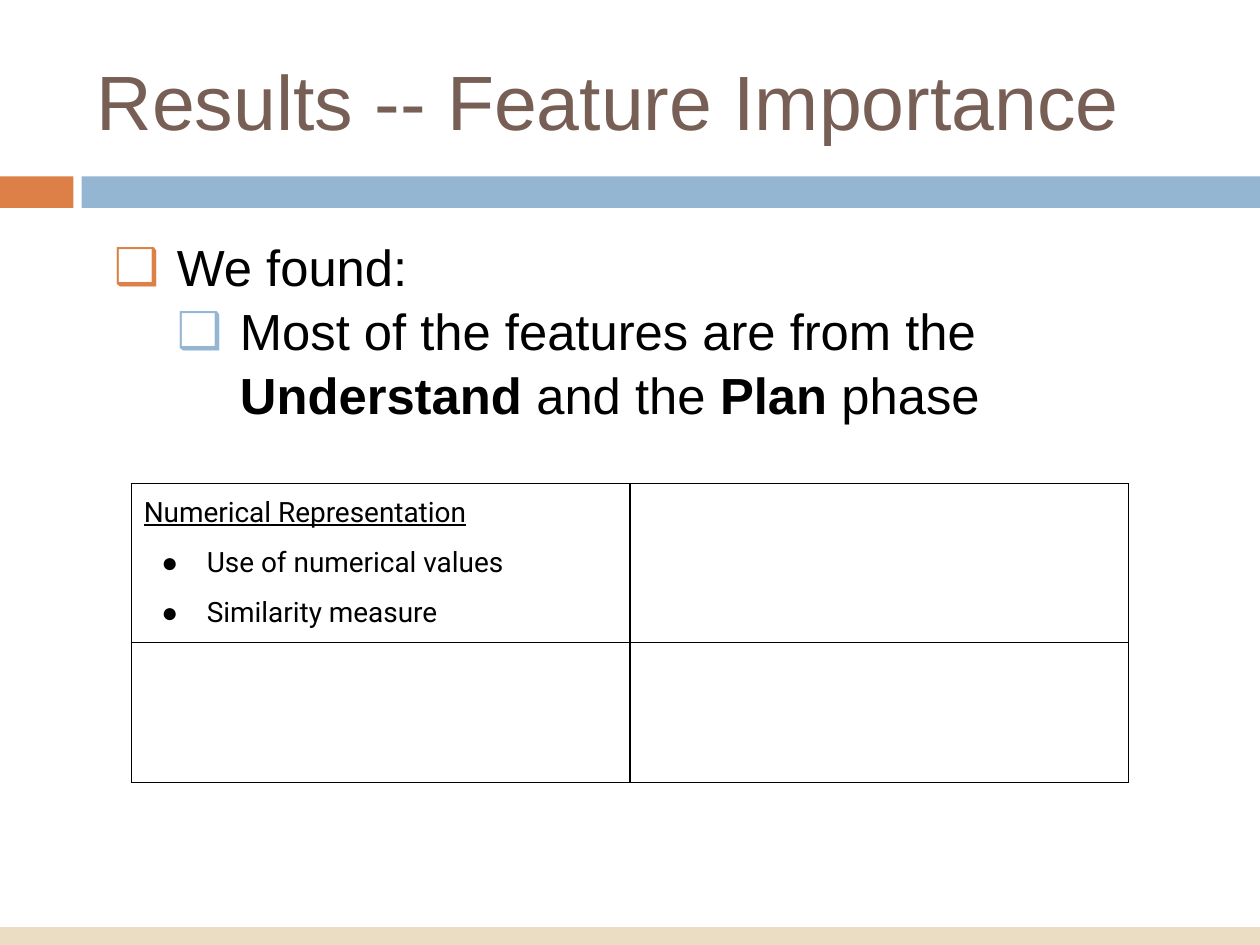
from lxml import etree
from pptx import Presentation
from pptx.dml.color import RGBColor
from pptx.enum.shapes import MSO_SHAPE
from pptx.enum.text import MSO_ANCHOR, MSO_AUTO_SIZE, PP_ALIGN
from pptx.oxml.ns import qn
from pptx.util import Pt

RECTANGLE = MSO_SHAPE.RECTANGLE
MIDDLE = MSO_ANCHOR.MIDDLE
TOP = MSO_ANCHOR.TOP
LEFT = PP_ALIGN.LEFT
NO_AUTOFIT = MSO_AUTO_SIZE.NONE
TITLE_ONLY = 5
INSET = 7.2
COLORS = {
    "orange": "DD8047",
    "blue": "94B6D2",
    "sand": "EBDDC3",
    "brown": "775F55",
    "black": "000000",
}


def add_band(slide, left, top, width, height, color):
    """Draw a plain coloured bar."""
    band = slide.shapes.add_shape(RECTANGLE, Pt(left), Pt(top), Pt(width), Pt(height))
    band.shadow.inherit = False
    band.fill.solid()
    band.fill.fore_color.rgb = RGBColor.from_string(COLORS[color])
    band.line.fill.background()


def add_bullet(paragraph, symbol, color, margin, indent):
    """Give a paragraph a coloured bullet with a hanging indent."""
    properties = paragraph._p.get_or_add_pPr()
    properties.set("marL", str(Pt(margin)))
    properties.set("indent", str(Pt(indent)))
    bullet_color = etree.SubElement(properties, qn("a:buClr"))
    etree.SubElement(bullet_color, qn("a:srgbClr"), val=COLORS[color])
    etree.SubElement(properties, qn("a:buFont"), typeface="Arial")
    etree.SubElement(properties, qn("a:buChar"), char=symbol)


def write_paragraph(paragraph, *texts, size, font="Arial", color="black",
                    bold_texts=(), underline=False, before=0, spacing=1.0):
    """Write runs into a paragraph, with those in bold_texts in bold."""
    paragraph.alignment = LEFT
    paragraph.space_before = Pt(before)
    paragraph.line_spacing = spacing
    for text in texts:
        run = paragraph.add_run()
        run.text = text
        run.font.size = Pt(size)
        run.font.name = font
        run.font.color.rgb = RGBColor.from_string(COLORS[color])
        run.font.bold = text in bold_texts
        run.font.underline = underline


def set_frame(frame, anchor):
    """Set wrapping, anchor and equal insets of a text frame."""
    frame.word_wrap = True
    frame.auto_size = NO_AUTOFIT
    frame.vertical_anchor = anchor
    frame.margin_left = frame.margin_right = Pt(INSET)
    frame.margin_top = frame.margin_bottom = Pt(INSET)


def add_title(slide, text):
    """Place and format the title placeholder."""
    title = slide.shapes.title
    title.left, title.top, title.width, title.height = Pt(48), Pt(12), Pt(648), Pt(90)
    set_frame(title.text_frame, MIDDLE)
    write_paragraph(title.text_frame.paragraphs[0], text, size=44, color="brown")


def add_findings(slide):
    """Add the two-level list of findings."""
    box = slide.shapes.add_textbox(Pt(48), Pt(126), Pt(671), Pt(356.4))
    frame = box.text_frame
    set_frame(frame, TOP)
    finding = frame.paragraphs[0]
    write_paragraph(finding, "We found:", size=29, spacing=1.05)
    add_bullet(finding, "❑", "orange", 46, -36)
    detail = frame.add_paragraph()
    detail.level = 1
    write_paragraph(detail, "Most of the features are from the ", "Understand",
                    " and the ", "Plan", " phase", size=29, spacing=1.05,
                    bold_texts=("Understand", "Plan"))
    add_bullet(detail, "❑", "blue", 82, -36)


def format_cell(cell):
    """Give a cell black borders, no fill and equal insets."""
    cell.margin_left = cell.margin_right = Pt(INSET)
    cell.margin_top = cell.margin_bottom = Pt(INSET)
    properties = cell._tc.get_or_add_tcPr()
    for side in ("a:lnL", "a:lnR", "a:lnT", "a:lnB"):
        line = etree.SubElement(properties, qn(side), w=str(Pt(0.75)))
        fill = etree.SubElement(line, qn("a:solidFill"))
        etree.SubElement(fill, qn("a:srgbClr"), val=COLORS["black"])
    cell.fill.background()


def add_feature_table(slide):
    """Add the two-by-two feature table with its first cell filled in."""
    frame = slide.shapes.add_table(2, 2, Pt(75), Pt(276.5), Pt(570), Pt(170.5))
    table = frame.table
    table.first_row = table.horz_banding = False
    for row, height in zip(table.rows, (90.5, 80)):
        row.height = Pt(height)
    for cell in table.iter_cells():
        format_cell(cell)
    text_frame = table.cell(0, 0).text_frame
    write_paragraph(text_frame.paragraphs[0], "Numerical Representation",
                    size=16, font="Roboto", underline=True)
    for text in ("Use of numerical values", "Similarity measure"):
        paragraph = text_frame.add_paragraph()
        write_paragraph(paragraph, text, size=16, font="Roboto", before=10)
        add_bullet(paragraph, "●", "black", 36, -26)


def main():
    """Build the slide and save it."""
    presentation = Presentation()
    presentation.slide_width, presentation.slide_height = Pt(720), Pt(540)
    slide = presentation.slides.add_slide(presentation.slide_layouts[TITLE_ONLY])
    add_band(slide, 0, 100.8, 42, 18, "orange")
    add_band(slide, 46.6, 100.8, 673.4, 18, "blue")
    add_band(slide, 0, 529.8, 720, 10.2, "sand")
    add_title(slide, "Results -- Feature Importance")
    add_feature_table(slide)
    add_findings(slide)
    presentation.save("out.pptx")


if __name__ == "__main__":
    main()
